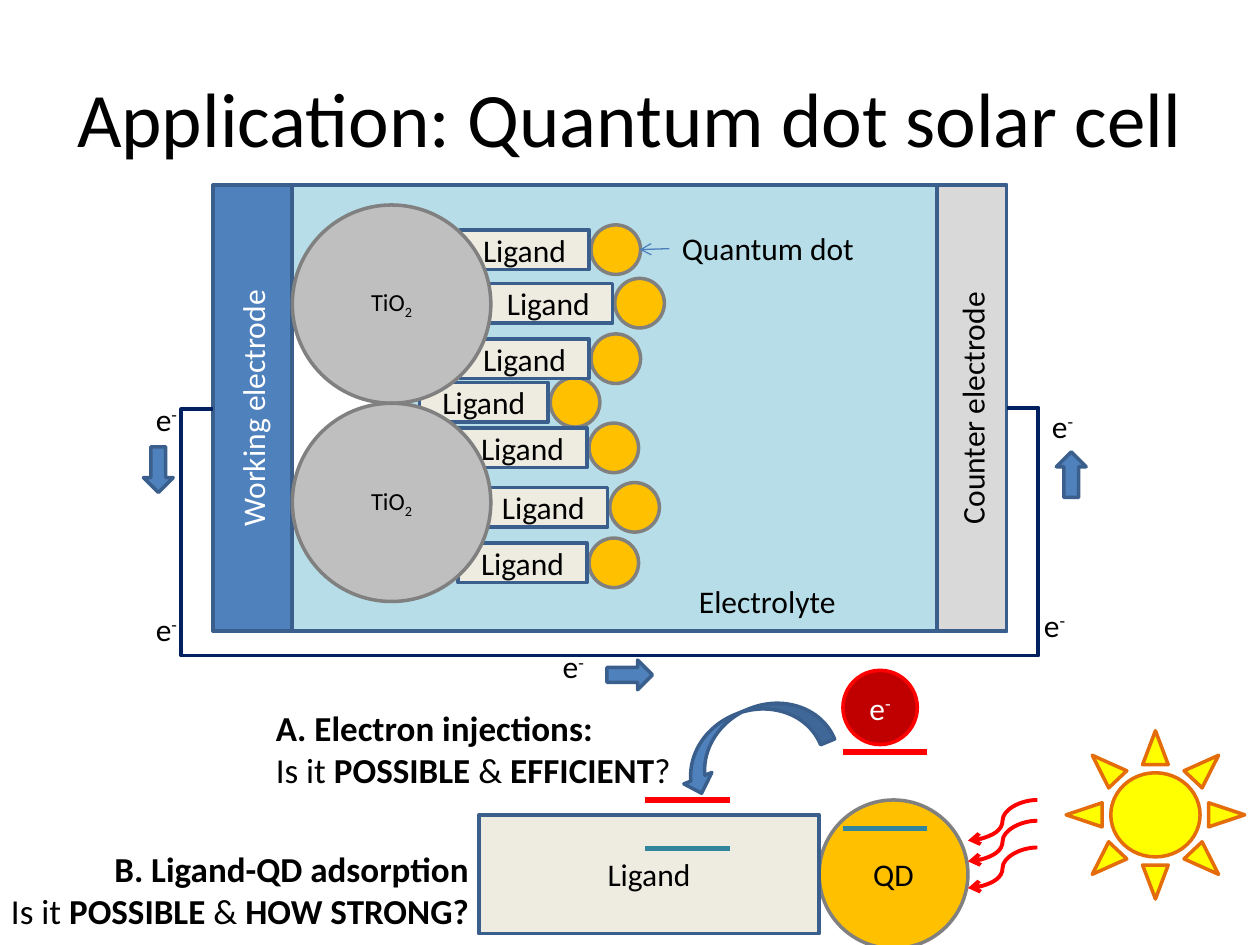
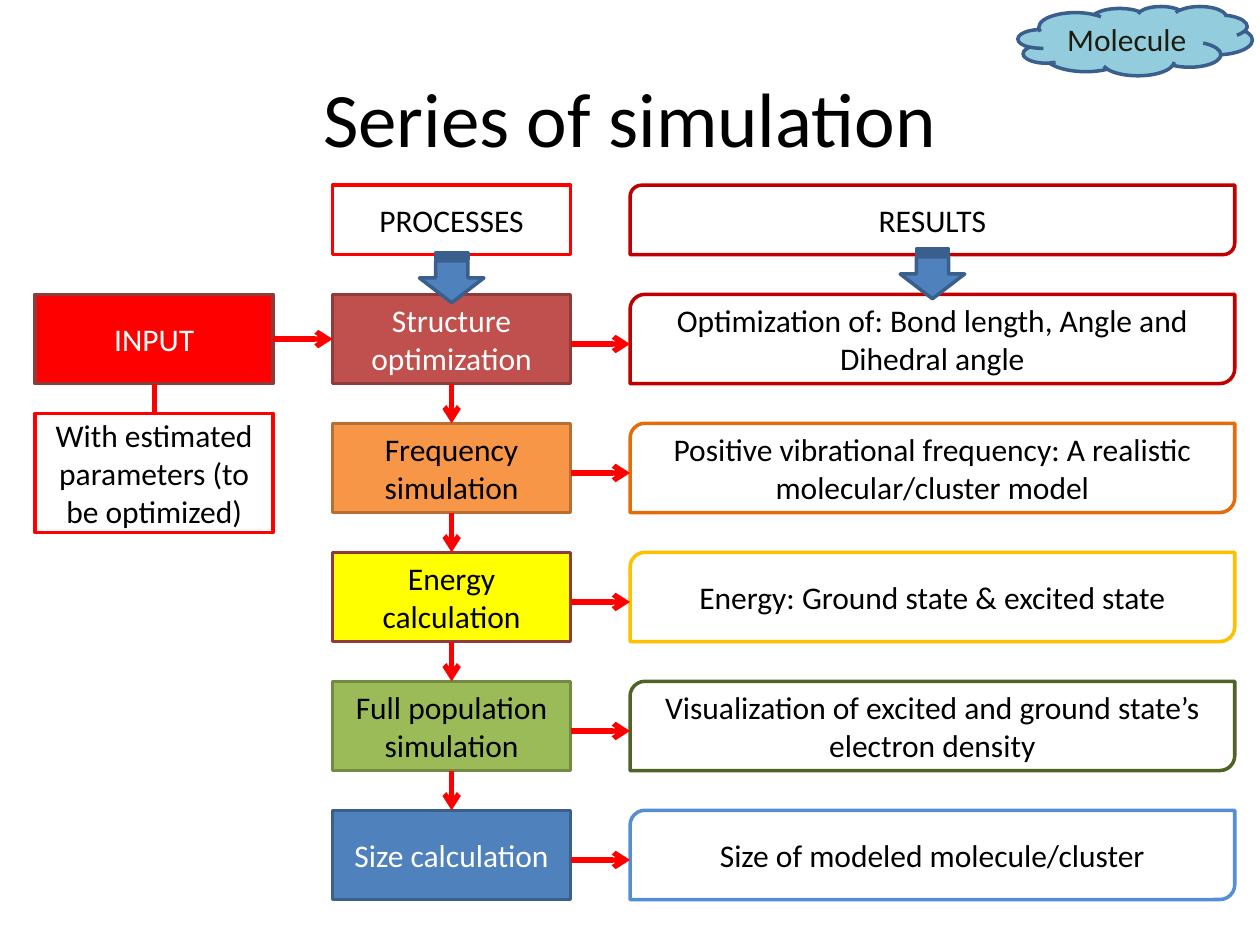
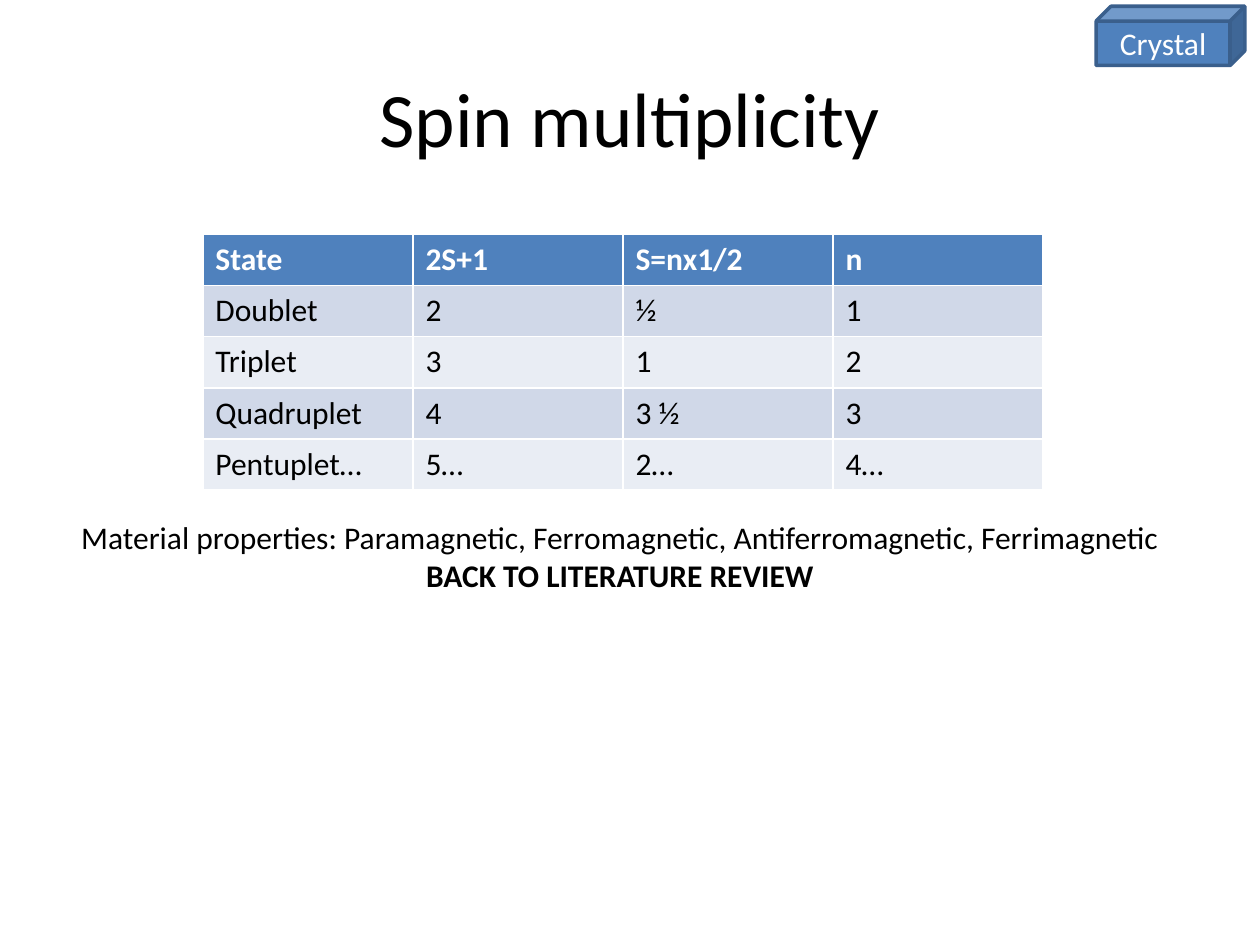
from dataclasses import dataclass
from lxml.etree import SubElement
from pptx import Presentation
from pptx.dml.color import RGBColor
from pptx.enum.shapes import MSO_CONNECTOR, MSO_SHAPE
from pptx.enum.text import MSO_ANCHOR, PP_ALIGN
from pptx.oxml.ns import qn
from pptx.util import Inches, Pt

FONT = "Calibri"
C = {
    "black": "000000", "white": "FFFFFF", "ink": "1E1C11",
    "blue": "4F81BD", "blue_edge": "3A5F8C", "thin_blue": "4B7EBC", "navy": "002060",
    "sky": "558ED5", "aqua": "B7DEE8", "cloud": "93CDDD", "teal": "31859C",
    "red": "FF0000", "dark_red": "C00000", "brick": "C0504D", "brick_edge": "8E3B39",
    "orange": "F79646", "orange_edge": "B76F34", "burnt": "E46C0A",
    "gold": "FFC000", "yellow": "FFFF00",
    "green": "9BBB59", "green_edge": "738A42", "forest": "4F6228",
    "cream": "EEECE1", "light_gray": "D9D9D9", "silver": "BFBFBF", "gray": "808080",
    "band_dark": "D0D8E8", "band_light": "E9EDF4",
}
ELECTRON = ["e", ("-", 30000)]
TITANIA = ["TiO", ("2", -25000)]


@dataclass
class Box:
    x: float
    y: float
    w: float
    h: float
    cols: float = 1
    rows: float = 1

    def point(self, col, row):
        return (Inches(self.x + col * self.w / self.cols),
                Inches(self.y + row * self.h / self.rows))

    def area(self, col, row, w, h):
        return (*self.point(col, row),
                Inches(w * self.w / self.cols), Inches(h * self.h / self.rows))


WHOLE = (0, 0, 1, 1)


def rgb(name):
    return RGBColor.from_string(C[name])


def style(p, size=18, color="black", align=None, bold=None):
    p.alignment = align
    p.font.name = FONT
    p.font.size = Pt(size)
    p.font.bold = bold
    p.font.color.rgb = rgb(color)


def write(p, runs, **kw):
    for run in [runs] if isinstance(runs, str) else runs:
        text, mark = run if isinstance(run, tuple) else (run, None)
        if text == "\n":
            p.add_line_break()
            continue
        r = p.add_run()
        r.text = text
        if mark == "bold":
            r.font.bold = True
        elif mark:
            r.font._element.set("baseline", str(mark))
    style(p, **kw)


def shape(s, kind, area, fill, line, runs=None, rotation=0, vertical=False, **kw):
    sp = s.shapes.add_shape(kind, *area)
    sp.shadow.inherit = False
    sp.rotation = rotation
    if fill:
        sp.fill.solid()
        sp.fill.fore_color.rgb = rgb(fill)
    else:
        sp.fill.background()
    sp.line.color.rgb = rgb(line)
    sp.line.width = Pt(2)
    if runs:
        tf = sp.text_frame
        tf.word_wrap = True
        tf.vertical_anchor = MSO_ANCHOR.MIDDLE
        if vertical:
            tf._txBody.bodyPr.set("vert", "vert270")
        write(tf.paragraphs[0], runs, align=PP_ALIGN.CENTER, **kw)
    return sp


def label(s, area, *paragraphs, **kw):
    tf = s.shapes.add_textbox(*area).text_frame
    tf.word_wrap = True
    for i, runs in enumerate(paragraphs):
        write(tf.add_paragraph() if i else tf.paragraphs[0], runs, **kw)


def line(s, start, end, color="red", width=3, arrow=False, kind=MSO_CONNECTOR.STRAIGHT):
    cxn = s.shapes.add_connector(kind, *start, *end)
    cxn.line.color.rgb = rgb(color)
    cxn.line.width = Pt(width)
    if arrow:
        SubElement(cxn.line._get_or_add_ln(), qn("a:tailEnd"), type="arrow")
    SubElement(cxn._element.spPr, qn("a:effectLst"))
    return cxn


def titled_slide(prs, title):
    s = prs.slides.add_slide(prs.slide_layouts[5])
    sp = s.shapes.title
    sp.left, sp.top, sp.width, sp.height = Box(0.5, 0.3, 9, 1.25).area(*WHOLE)
    sp.text_frame.vertical_anchor = MSO_ANCHOR.MIDDLE
    write(sp.text_frame.paragraphs[0], title, size=44, align=PP_ALIGN.CENTER)
    return s


def outer_wire(s, box):
    rise, depth, reach = 0.18, 24.8, 0.04
    cxn = line(s, box.point(0, 22.44), box.point(box.cols, 22.44 + rise), "navy", 2.25,
               kind=MSO_CONNECTOR.ELBOW)
    xfrm = cxn._element.spPr.find(qn("a:xfrm"))
    xfrm.set("rot", "10800000")
    xfrm.set("flipH", "1")
    geom = cxn._element.spPr.find(qn("a:prstGeom"))
    geom.set("prst", "bentConnector5")
    guides = geom.find(qn("a:avLst"))
    if guides is None:
        guides = SubElement(geom, qn("a:avLst"))
    for i, share in enumerate((-reach, -depth / rise, 1 + reach), 1):
        SubElement(guides, qn("a:gd"), name=f"adj{i}", fmla=f"val {round(share * 100000)}")


def solar_cell(s, box):
    shape(s, MSO_SHAPE.RECTANGLE, box.area(8, 0, 72, 45), "aqua", "blue_edge")
    shape(s, MSO_SHAPE.RECTANGLE, box.area(0, 0, 8, 45), "blue", "blue_edge",
          "Working electrode", vertical=True, color="white")
    for col, row in [(38.1, 4), (40.5, 9.4), (34, 19.4), (40, 30),
                     (37.9, 24), (38.1, 15), (37.9, 35.6)]:
        shape(s, MSO_SHAPE.OVAL, box.area(col, row, 5, 5), "gold", "gray")
        shape(s, MSO_SHAPE.RECTANGLE, box.area(col - 13.2, row + 0.5, 13, 4),
              "cream", "blue_edge", "Ligand")
    label(s, box.area(46, 3.8, 20, 5), "Quantum dot")
    line(s, box.point(46, 6.4), box.point(43, 6.5), "thin_blue", 0.75, arrow=True)
    shape(s, MSO_SHAPE.RECTANGLE, box.area(8, 12, 10, 20.5), "white", "blue_edge")
    for row in (2, 22):
        shape(s, MSO_SHAPE.OVAL, box.area(8, row, 20, 20), "silver", "gray", TITANIA, size=14)
    label(s, box.area(44, 39.4, 20, 5), "Electrolyte", align=PP_ALIGN.RIGHT)
    shape(s, MSO_SHAPE.RECTANGLE, box.area(73, 0, 7, 45), "light_gray", "blue_edge",
          "Counter electrode", vertical=True)
    outer_wire(s, box)
    for col, row in [(-7, 21), (34, 46), (82.5, 41.8), (83.3, 21.7), (-7, 42.2)]:
        label(s, box.area(col, row, 7, 5), ELECTRON)
    for col, row, rotation in [(-7, 26.4, 0), (40.5, 47.1, 270), (85, 26.9, 180)]:
        shape(s, MSO_SHAPE.DOWN_ARROW, box.area(col, row, 3, 4.6), "blue", "blue_edge",
              rotation=rotation)


def energy_levels(s, box):
    shape(s, MSO_SHAPE.OVAL, box.area(34.3, 13.1, 15, 15), "gold", "gray", "QD")
    shape(s, MSO_SHAPE.RECTANGLE, box.area(0, 14.6, 34.3, 12), "cream", "blue_edge", "Ligand")
    shape(s, MSO_SHAPE.SUN, box.area(59.2, 6.1, 18, 17), "yellow", "burnt")
    shape(s, MSO_SHAPE.OVAL, box.area(36.7, 0, 7.5, 7.5), "dark_red", "red", ELECTRON,
          color="white")
    jump = shape(s, MSO_SHAPE.CURVED_UP_ARROW, box.area(19.3, 4.1, 16, 6.1),
                 "blue", "blue_edge", rotation=157.8)
    for i, value in enumerate((0.25, 0.5, 0.256)):
        jump.adjustments[i] = value
    for col, row, color in [(36.7, 8.25, "red"), (16.8, 13.1, "red"),
                            (36.7, 16, "teal"), (16.8, 18, "teal")]:
        line(s, box.point(col, row), box.point(col + 8.5, row), color)
    for row in (13.1, 15.2, 17.9):
        line(s, box.point(56.3, row), box.point(49.3, row + 4.1), width=2.25, arrow=True,
             kind=MSO_CONNECTOR.CURVE)


def question(s, box, heading, ending, align=None):
    label(s, box.area(*WHOLE),
          [(heading, "bold"), ("\n", None), "Is it ", ("POSSIBLE", "bold"), " & ", *ending],
          size=20, align=align)


def flow_chart(s, box):
    steps = [
        ("Structure optimization", "brick", "brick_edge", "white",
         "Optimization of: Bond length, Angle and Dihedral angle", "dark_red"),
        ("Frequency simulation", "orange", "orange_edge", "black",
         "Positive vibrational frequency: A realistic molecular/cluster model", "burnt"),
        ("Energy calculation", "yellow", "brick_edge", "black",
         "Energy: Ground state & excited state", "gold"),
        ("Full population simulation", "green", "green_edge", "black",
         "Visualization of excited and ground state’s electron density", "forest"),
        ("Size calculation", "blue", "blue_edge", "white",
         "Size of modeled molecule/cluster", "sky"),
    ]
    step_col, result_col, step_w, result_w = 30, 60, 24, 61
    first, pitch, height = 11, 13, 9
    middle = step_col + step_w / 2
    for i, (step, fill, edge, color, result, result_edge) in enumerate(steps):
        row = first + i * pitch
        shape(s, MSO_SHAPE.RECTANGLE, box.area(step_col, row, step_w, height),
              fill, edge, step, color=color)
        shape(s, MSO_SHAPE.ROUND_2_DIAG_RECTANGLE, box.area(result_col, row, result_w, height),
              None, result_edge, result)
        line(s, box.point(step_col + step_w, row + 5), box.point(result_col, row + 5), arrow=True)
        if i:
            line(s, box.point(middle, row - pitch + height), box.point(middle, row), arrow=True)

    shape(s, MSO_SHAPE.RECTANGLE, box.area(0, first, step_w, height), "red", "brick_edge",
          "INPUT", color="white")
    line(s, box.point(step_w, first + 4.5), box.point(step_col, first + 4.5), arrow=True)
    shape(s, MSO_SHAPE.RECTANGLE, box.area(0, 23, step_w, 12), None, "red",
          "With estimated parameters (to be optimized)")
    line(s, box.point(step_w / 2, 23), box.point(step_w / 2, first + height))

    shape(s, MSO_SHAPE.RECTANGLE, box.area(step_col, 0, step_w, 7), None, "red", "PROCESSES")
    shape(s, MSO_SHAPE.ROUND_2_DIAG_RECTANGLE, box.area(result_col, 0, result_w, 7),
          None, "dark_red", "RESULTS")
    for col, row in [(middle, 6.1), (result_col + result_w / 2, 5.7)]:
        shape(s, MSO_SHAPE.STRIPED_RIGHT_ARROW, box.area(col - 2.5, row, 5, 6.5),
              "blue", "blue_edge", rotation=90)


def spin_table(s, box):
    rows = [
        ("State", "2S+1", "S=nx1/2", "n"),
        ("Doublet", "2", "½", "1"),
        ("Triplet", "3", "1", "2"),
        ("Quadruplet", "4", "3 ½", "3"),
        ("Pentuplet…", "5…", "2…", "4…"),
    ]
    table = s.shapes.add_table(len(rows), len(rows[0]), *box.area(*WHOLE)).table
    for i, row in enumerate(rows):
        fill = "band_dark" if i % 2 else "band_light"
        for j, text in enumerate(row):
            cell = table.cell(i, j)
            cell.fill.solid()
            cell.fill.fore_color.rgb = rgb(fill if i else "blue")
            write(cell.text_frame.paragraphs[0], text, bold=not i,
                  color="black" if i else "white")


def material_note(s, box):
    label(s, box.area(*WHOLE),
          "Material properties: Paramagnetic, Ferromagnetic, Antiferromagnetic, Ferrimagnetic",
          [("BACK TO LITERATURE REVIEW", "bold")], align=PP_ALIGN.CENTER)


def main():
    prs = Presentation()
    prs.slide_width, prs.slide_height = Inches(10), Inches(7.5)

    s = titled_slide(prs, "Application: Quantum dot solar cell")
    question(s, Box(2.09, 5.56, 3.62, 0.77), "A. Electron injections:",
             [("EFFICIENT", "bold"), "?"])
    energy_levels(s, Box(3.8, 5.32, 6.3, 2.2, 80, 28))
    solar_cell(s, Box(1.69, 1.47, 6.3, 3.54, 80, 45))
    question(s, Box(-0.05, 6.68, 3.87, 0.77), "B. Ligand-QD adsorption",
             [("HOW STRONG?", "bold")], PP_ALIGN.RIGHT)

    s = titled_slide(prs, "Series of simulation")
    flow_chart(s, Box(0.28, 1.47, 9.52, 5.67, 121, 72))
    shape(s, MSO_SHAPE.CLOUD, Box(8.08, 0.05, 1.86, 0.55).area(*WHOLE), "cloud", "blue_edge",
          "Molecule", color="ink")

    s = titled_slide(prs, "Spin multiplicity")
    spin_table(s, Box(1.61, 1.86, 6.67, 2.03))
    material_note(s, Box(0.51, 4.06, 8.82, 0.71))
    shape(s, MSO_SHAPE.CUBE, Box(8.7, 0.05, 1.18, 0.47).area(*WHOLE), "blue", "blue_edge",
          "Crystal", color="white")

    prs.save("out.pptx")


if __name__ == "__main__":
    main()
